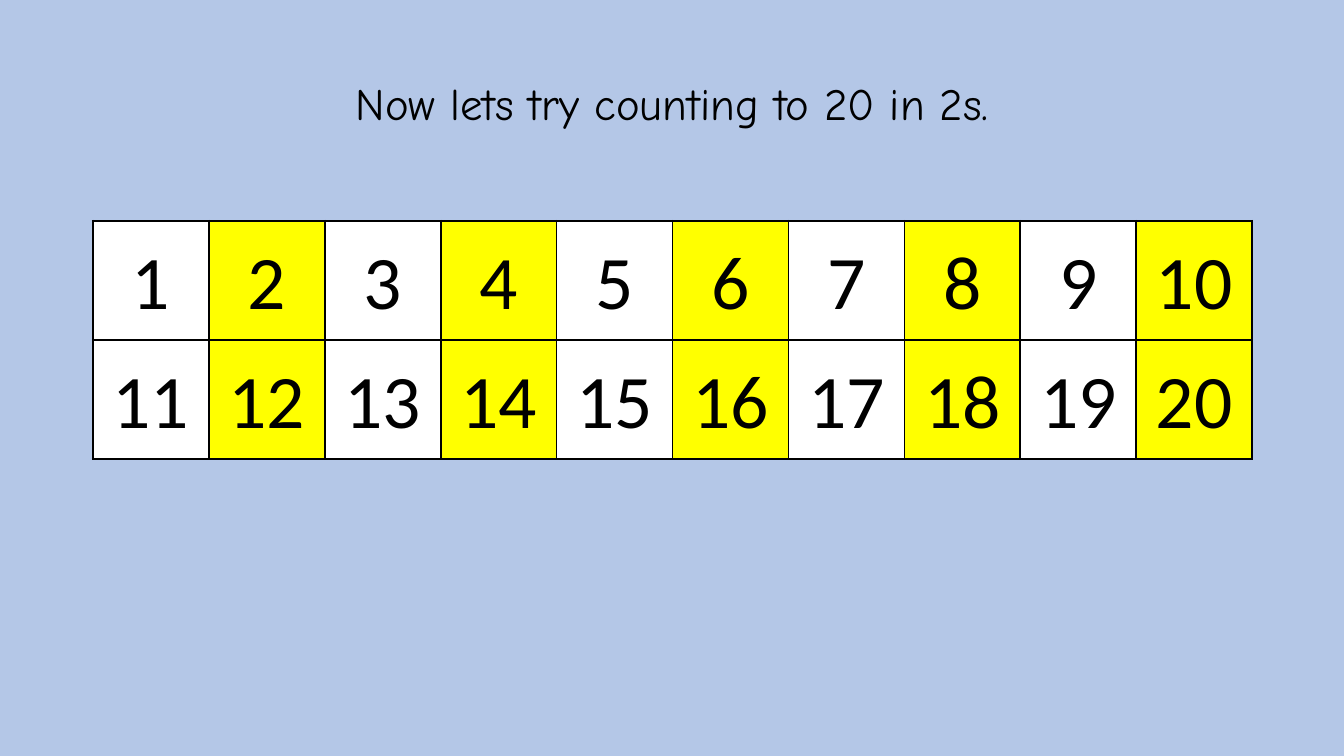
from lxml import etree
from pptx import Presentation, util as u
from pptx.dml.color import RGBColor
from pptx.enum import text
from pptx.oxml import ns

COLORS = {"background": "B4C7E7", "ink": "000000", "odd": "FFFFFF", "even": "FFFF00"}
ROWS, COLUMNS, STEP = 2, 10, 2
TITLE_BOX = (1, 0.7, 11.34, 1.72)
GRID_BOX = (0.92, 2.19, 11.5, 2.36)
TITLE_FONT = {"name": "Comic Neue", "size": u.Pt(32)}
NUMBER_FONT = {"name": "Calibri", "size": u.Pt(54), "bold": False}
TITLE_FRAME = {"word_wrap": True, "vertical_anchor": text.MSO_ANCHOR.TOP}
CELL_FORMAT = {
    "margin_left": u.Inches(0.07),
    "margin_right": u.Inches(0.07),
    "margin_top": 0,
    "margin_bottom": 0,
    "vertical_anchor": text.MSO_ANCHOR.MIDDLE,
}


def apply_format(target, values):
    for name, value in values.items():
        setattr(target, name, value)


def fill_solid(fill, color):
    fill.solid()
    fill.fore_color.rgb = RGBColor.from_string(COLORS[color])


def write_centred(paragraph, wording, font, line_spacing=1.0):
    paragraph.alignment = text.PP_ALIGN.CENTER
    paragraph.line_spacing = line_spacing
    run = paragraph.add_run()
    run.text = wording
    apply_format(run.font, font)
    run.font.color.rgb = RGBColor.from_string(COLORS["ink"])


def add_borders(cell, width):
    properties = cell._tc.get_or_add_tcPr()
    for side in ("lnL", "lnR", "lnT", "lnB"):
        line = etree.SubElement(properties, ns.qn(f"a:{side}"), w=str(int(width)))
        solid = etree.SubElement(line, ns.qn("a:solidFill"))
        etree.SubElement(solid, ns.qn("a:srgbClr"), val=COLORS["ink"])


def place_title(slide, box):
    title = slide.shapes.title
    title.left, title.top, title.width, title.height = map(u.Inches, box)
    apply_format(title.text_frame, TITLE_FRAME)
    write_centred(title.text_frame.paragraphs[0], "Now lets try counting to 20 in 2s.", TITLE_FONT)


def add_number_grid(slide, box):
    left, top, width, height = map(u.Inches, box)
    table = slide.shapes.add_table(ROWS, COLUMNS, left, top, width, height).table
    table.first_row = table.horz_banding = False
    for number, cell in enumerate(table.iter_cells(), start=1):
        apply_format(cell, CELL_FORMAT)
        add_borders(cell, u.Pt(1.5))
        fill_solid(cell.fill, "odd" if number % STEP else "even")
        write_centred(cell.text_frame.paragraphs[0], str(number), NUMBER_FONT, 1.07)


def main():
    presentation = Presentation()
    presentation.slide_width = u.Inches(13.33)
    presentation.slide_height = u.Inches(7.5)
    slide = presentation.slides.add_slide(presentation.slide_layouts.get_by_name("Title Only"))
    fill_solid(slide.background.fill, "background")
    place_title(slide, TITLE_BOX)
    add_number_grid(slide, GRID_BOX)
    presentation.save("out.pptx")


if __name__ == "__main__":
    main()
